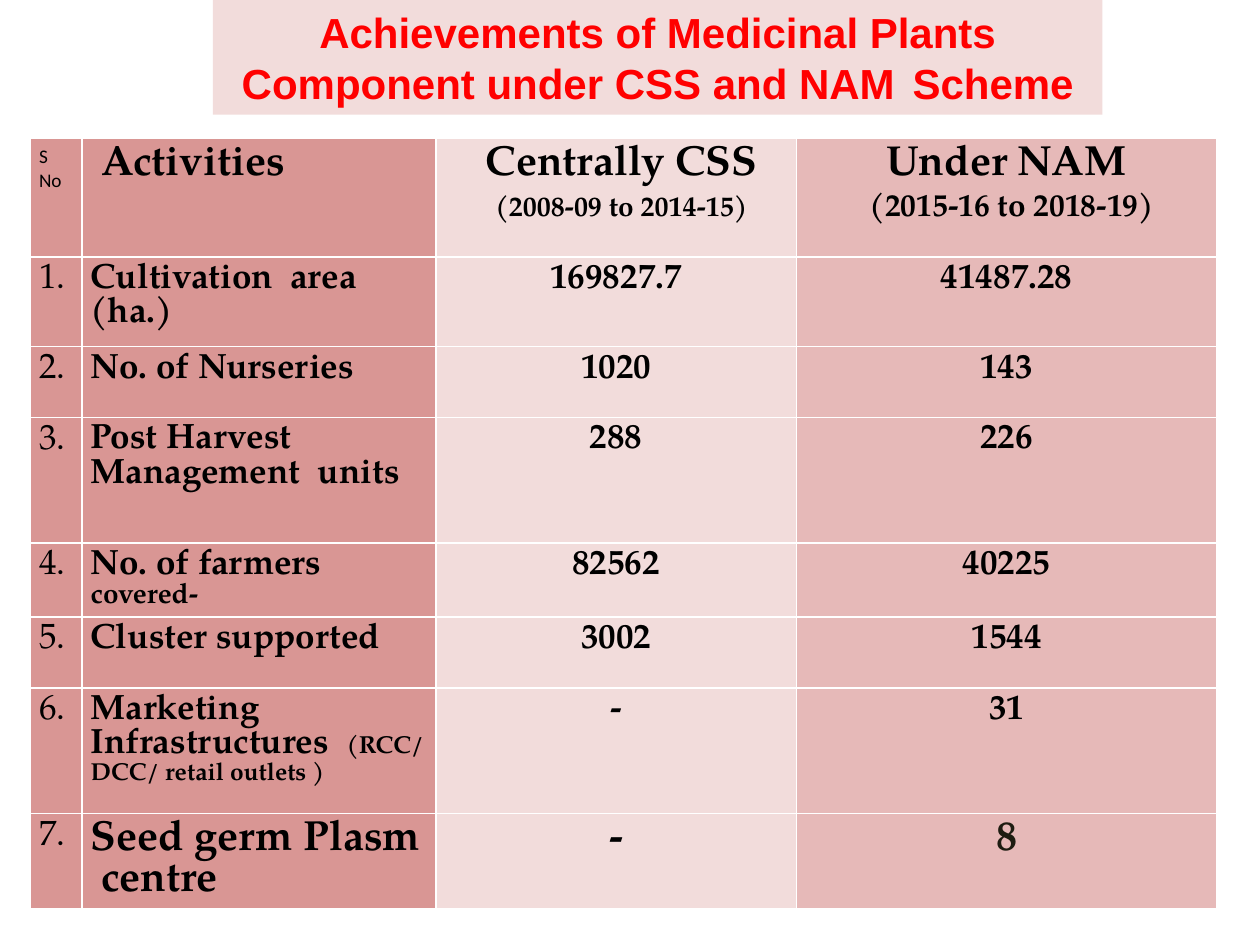
from typing import NamedTuple

from lxml import etree
from pptx import Presentation
from pptx.dml.color import RGBColor
from pptx.enum.shapes import MSO_SHAPE
from pptx.enum.text import MSO_ANCHOR, PP_ALIGN
from pptx.oxml.ns import qn
from pptx.util import Inches, Pt

RECT = MSO_SHAPE.RECTANGLE
LEFT, MID = PP_ALIGN.LEFT, PP_ALIGN.CENTER
MIDDLE = MSO_ANCHOR.MIDDLE

WIDE, HIGH = Inches(10), Inches(7.5)
SERIF = "TeX Gyre Pagella"
HUES = {
    "rose": "D99694", "pale": "F2DCDB", "pink": "E6B9B8",
    "red": "FF0000", "black": "000000", "dark": "1E1C11", "white": "FFFFFF",
}


class Run(NamedTuple):
    text: str
    size: float = 20
    bold: bool = True
    font: str = SERIF
    hue: str = "black"


class Col(NamedTuple):
    share: float  # percent of slide width
    fill: str
    align: PP_ALIGN


class Row(NamedTuple):
    share: float  # percent of slide height
    cells: list  # per cell: paragraphs, each a list of runs


def x(share: float) -> int:
    return round(WIDE * share / 100)


def y(share: float) -> int:
    return round(HIGH * share / 100)


def paint(fill, hue: str) -> None:
    fill.solid()
    fill.fore_color.rgb = RGBColor.from_string(HUES[hue])


def write(frame, paras: list, align: PP_ALIGN) -> None:
    """Fill a text frame with paragraphs of styled runs."""
    frame.word_wrap = True
    for i, runs in enumerate(paras):
        para = frame.paragraphs[0] if i == 0 else frame.add_paragraph()
        para.alignment = align
        for item in runs:
            run = para.add_run()
            run.text = item.text
            run.font.size = Pt(item.size)
            run.font.bold = item.bold
            run.font.name = item.font
            run.font.color.rgb = RGBColor.from_string(HUES[item.hue])


def edge(cell) -> None:
    """Give a cell thin white borders; they must precede its fill."""
    props = cell._tc.get_or_add_tcPr()
    for i, tag in enumerate(("a:lnL", "a:lnR", "a:lnT", "a:lnB")):
        line = etree.Element(qn(tag), w=str(Pt(1)))
        fill = etree.SubElement(line, qn("a:solidFill"))
        etree.SubElement(fill, qn("a:srgbClr"), val=HUES["white"])
        props.insert(i, line)


def entry(num: int, share: float, name: list, css: str, nam: str,
          size: float = 20, hue: str = "black") -> Row:
    """Make one numbered row of the table."""
    return Row(share, [
        [[Run(f"{num}.", bold=False)]],
        [name],
        [[Run(css, size)]],
        [[Run(nam, size, hue=hue)]],
    ])


def head(name: str, years: str, size: float) -> list:
    return [[Run(name, 24)], [Run(" ", 24), Run(years, size)]]


def draw_title(slide) -> None:
    box = slide.shapes.add_shape(RECT, x(16.9), 0, x(70.6), y(12.13))
    box.shadow.inherit = False
    box.line.fill.background()
    paint(box.fill, "pale")
    box.text_frame.vertical_anchor = MIDDLE
    write(box.text_frame, [[
        Run("Achievements of Medicinal Plants Component under CSS and NAM",
            24, font="Arial", hue="red"),
        Run("  ", 18, font="Arial", hue="red"),
        Run("Scheme", 24, font="Arial", hue="red"),
    ]], MID)


def draw_table(slide, cols: list, rows: list) -> None:
    table = slide.shapes.add_table(
        len(rows), len(cols), x(2.4), y(14.67),
        x(sum(c.share for c in cols)), y(sum(r.share for r in rows))).table
    table.first_row = table.horz_banding = False
    for c, col in enumerate(cols):
        table.columns[c].width = x(col.share)
    for r, row in enumerate(rows):
        table.rows[r].height = y(row.share)
        for c, col in enumerate(cols):
            cell = table.cell(r, c)
            cell.margin_left = cell.margin_right = Inches(0.07)
            cell.margin_top = cell.margin_bottom = Inches(0.05)
            paint(cell.fill, col.fill)
            edge(cell)
            write(cell.text_frame, row.cells[c], col.align)


COLS = [
    Col(4.1, "rose", LEFT),
    Col(28.1, "rose", LEFT),
    Col(28.6, "pale", MID),
    Col(33.4, "pink", MID),
]

SLIM, TALL = 7.5, 13.3
ROWS = [
    Row(12.5, [
        [[Run("S No", 11, False, "Calibri")]],
        [[Run(" Activities", 24)]],
        head(" Centrally CSS", "(2008-09 to 2014-15)", 16),
        head(" Under NAM ", "(2015-16 to 2018-19)", 18),
    ]),
    entry(1, 9.5, [Run("Cultivation  area  (ha.)")], "169827.7", "41487.28"),
    entry(2, SLIM, [Run("No. of Nurseries")], "1020", "143"),
    entry(3, TALL, [Run("Post Harvest Management  units")], "288", "226"),
    entry(4, SLIM, [Run("No. of farmers "), Run("covered-", 16)],
          "82562", "40225"),
    entry(5, SLIM, [Run("Cluster supported")], "3002", "1544"),
    entry(6, TALL, [Run("Marketing  Infrastructures  "),
                    Run("(RCC/ DCC/ retail outlets )", 14)], "-", "31"),
    entry(7, SLIM, [Run("Seed germ Plasm  centre", 24)], "-", "8",
          24, "dark"),
]


def main() -> None:
    deck = Presentation()
    deck.slide_width, deck.slide_height = WIDE, HIGH
    slide = deck.slides.add_slide(deck.slide_layouts[6])
    draw_table(slide, COLS, ROWS)
    draw_title(slide)
    deck.save("out.pptx")


if __name__ == "__main__":
    main()
